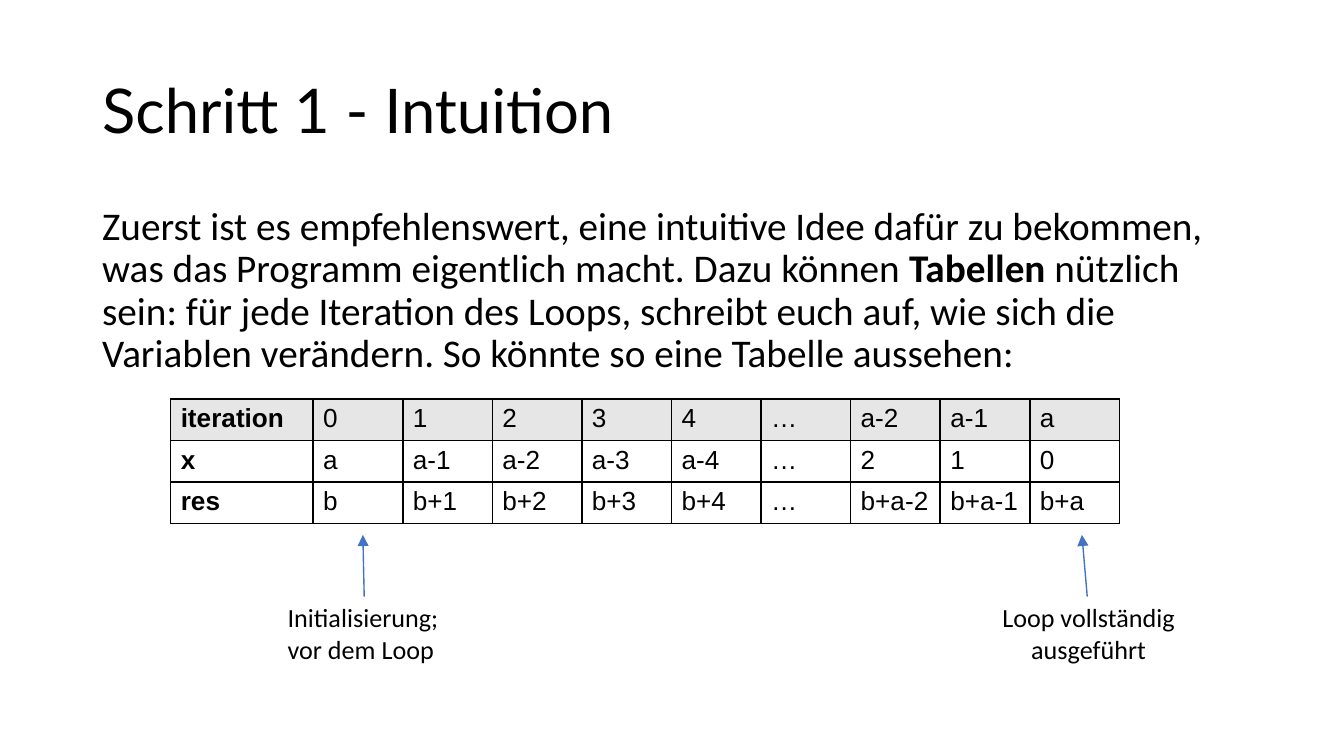
from lxml import etree
from pptx import Presentation
from pptx.dml.color import RGBColor
from pptx.enum.shapes import MSO_CONNECTOR as Connector
from pptx.enum.text import MSO_ANCHOR as Anchor, PP_ALIGN as Align
from pptx.oxml.ns import qn
from pptx.util import Inches, Pt

BLACK, GREY, BLUE = "000000", "E7E6E6", "4472C4"
SLIDE_WIDTH = 10
INSET_Y = Inches(0.15 / 4)

TRACE = [
    ["iteration", "0", "1", "2", "3", "4", "…", "a-2", "a-1", "a"],
    ["x", "a", "a-1", "a-2", "a-3", "a-4", "…", "2", "1", "0"],
    ["res", "b", "b+1", "b+2", "b+3", "b+4", "…", "b+a-2", "b+a-1", "b+a"],
]
INTRO = [
    ("Zuerst ist es empfehlenswert, eine intuitive Idee dafür zu bekommen, "
     "was das Programm eigentlich macht. Dazu können ", False),
    ("Tabellen", True),
    (" nützlich sein: für jede Iteration des Loops, schreibt euch auf, wie sich "
     "die Variablen verändern. So könnte so eine Tabelle aussehen:", False),
]


def rgb(value):
    return RGBColor.from_string(value)


def style(paragraph, size, name, align=Align.LEFT, spacing=1.0):
    paragraph.alignment = align
    paragraph.line_spacing = spacing
    paragraph.font.size = Pt(size)
    paragraph.font.name = name
    paragraph.font.color.rgb = rgb(BLACK)


def set_frame(frame, anchor=Anchor.TOP):
    frame.word_wrap = True
    frame.vertical_anchor = anchor
    frame.margin_left = frame.margin_right = Inches(0.07)
    frame.margin_top = frame.margin_bottom = INSET_Y


def add_title(slide, text):
    title = slide.shapes.title
    title.left, title.top = Inches(0.69), Inches(0.3)
    title.width, title.height = Inches(8.62), Inches(1.09)
    set_frame(title.text_frame, Anchor.MIDDLE)
    title.text_frame.text = text
    style(title.text_frame.paragraphs[0], 33, "Lato", spacing=0.9)


def add_text(slide, left, top, width, height):
    box = slide.shapes.add_textbox(*map(Inches, (left, top, width, height)))
    set_frame(box.text_frame)
    return box.text_frame


def add_intro(slide):
    paragraph = add_text(slide, 0.69, 1.5, 8.62, 3.57).paragraphs[0]
    for text, bold in INTRO:
        run = paragraph.add_run()
        run.text = text
        run.font.bold = bold
    style(paragraph, 21, "Calibri", spacing=0.9)


def add_note(slide, left, width, text, align):
    frame = add_text(slide, left, 4.44, width, 0.53)
    frame.text = text
    for paragraph in frame.paragraphs:
        style(paragraph, 14, "Calibri", align)


def add_borders(cell):
    properties = cell._tc.get_or_add_tcPr()
    for side in ("a:lnL", "a:lnR", "a:lnT", "a:lnB"):
        border = etree.SubElement(properties, qn(side), w=str(Pt(1)))
        fill = etree.SubElement(border, qn("a:solidFill"))
        etree.SubElement(fill, qn("a:srgbClr"), val=BLACK)


def fill_cell(cell, text, bold, shaded):
    cell.text = text
    cell.margin_left = cell.margin_right = 2 * INSET_Y
    cell.margin_top = cell.margin_bottom = INSET_Y
    paragraph = cell.text_frame.paragraphs[0]
    style(paragraph, 14, "Arial")
    paragraph.font.bold = bold
    add_borders(cell)
    if shaded:
        cell.fill.solid()
        cell.fill.fore_color.rgb = rgb(GREY)
    else:
        cell.fill.background()


def add_trace_table(slide):
    widths = [1.06] + [6 / 9] * 9
    table = slide.shapes.add_table(
        len(TRACE), len(widths), Inches(1.27), Inches(2.97),
        Inches(sum(widths)), Inches(0.3 * len(TRACE))).table
    table.first_row = table.horz_banding = False
    for column, width in zip(table.columns, widths):
        column.width = Inches(width)
    for r, values in enumerate(TRACE):
        for c, value in enumerate(values):
            fill_cell(table.cell(r, c), value, bold=c == 0, shaded=r == 0)


def add_arrow(slide, start_x, end_x):
    arrow = slide.shapes.add_connector(
        Connector.STRAIGHT, Inches(start_x), Inches(4.44), Inches(end_x), Inches(3.98))
    arrow.line.color.rgb = rgb(BLUE)
    arrow.line.width = Pt(0.75)
    etree.SubElement(arrow.line._get_or_add_ln(), qn("a:tailEnd"), type="triangle")
    etree.SubElement(arrow._element.spPr, qn("a:effectLst"))


def main():
    # Widescreen 16:9 page
    deck = Presentation()
    deck.slide_width = Inches(SLIDE_WIDTH)
    deck.slide_height = Inches(SLIDE_WIDTH * 9 / 16)
    slide = deck.slides.add_slide(deck.slide_layouts[5])

    # Heading and explanation
    add_title(slide, "Schritt 1 - Intuition")
    add_intro(slide)

    # Variable values per iteration
    add_trace_table(slide)

    # Notes pointing at the first and last iteration
    add_note(slide, 2.07, 1.27, "Initialisierung; vor dem Loop", Align.LEFT)
    add_note(slide, 7.34, 1.52, "Loop vollständig\nausgeführt", Align.CENTER)
    add_arrow(slide, 2.71, 2.7)
    add_arrow(slide, 8.09, 8.05)

    deck.save("out.pptx")


if __name__ == "__main__":
    main()
